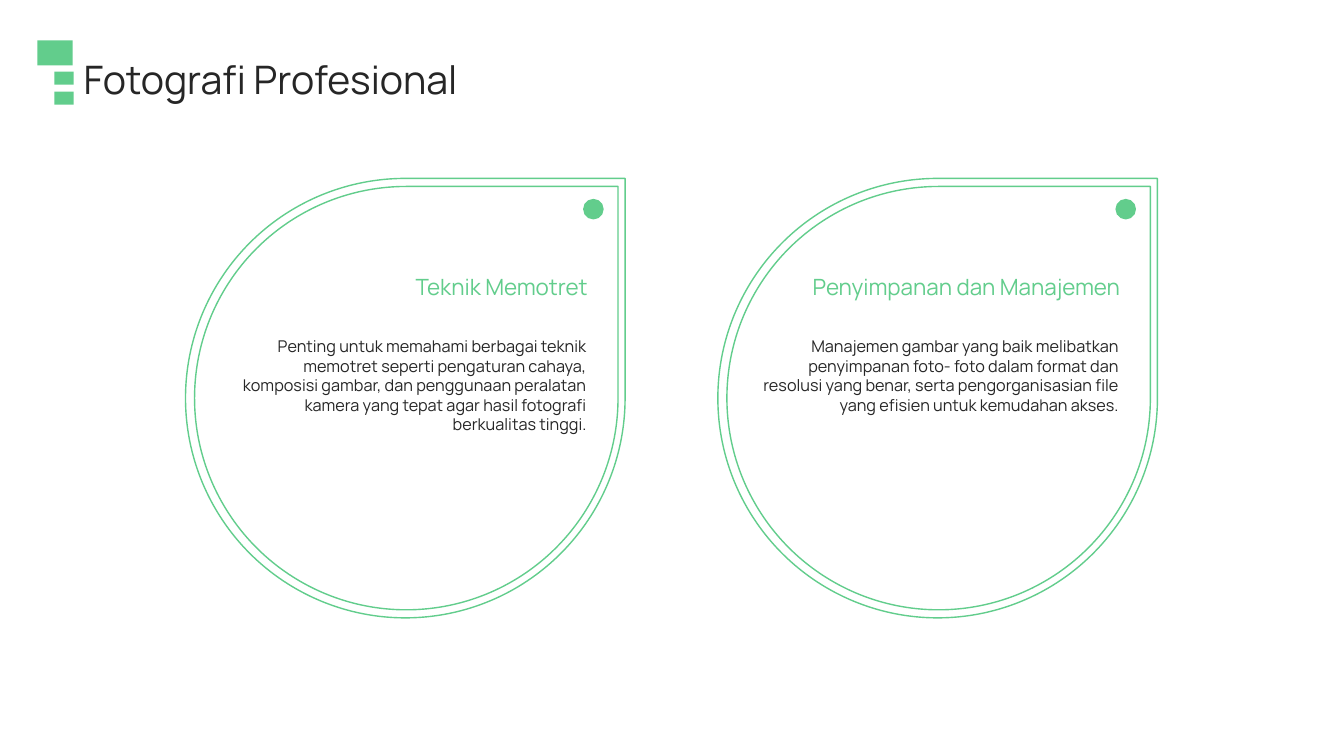
from pptx import Presentation
from pptx.dml.color import RGBColor
from pptx.enum.shapes import MSO_SHAPE
from pptx.enum.text import MSO_ANCHOR, PP_ALIGN
from pptx.util import Inches, Pt

GREEN = RGBColor(0x62, 0xCD, 0x8C)
DARK = RGBColor(0x26, 0x26, 0x26)
WHITE = RGBColor(0xFF, 0xFF, 0xFF)
FONT = "Manrope"

TOPICS = [
    ("Teknik Memotret",
     "Penting untuk memahami berbagai teknik memotret seperti pengaturan cahaya, "
     "komposisi gambar, dan penggunaan peralatan kamera yang tepat agar hasil "
     "fotografi berkualitas tinggi."),
    ("Penyimpanan dan Manajemen",
     "Manajemen gambar yang baik melibatkan penyimpanan foto- foto dalam format "
     "dan resolusi yang benar, serta pengorganisasian file yang efisien untuk "
     "kemudahan akses."),
]
FIRST_LEFT = 1.84
TOPIC_PITCH = 5.28


def write_text(holder, text, *, size, color=DARK, align=PP_ALIGN.LEFT,
               anchor=MSO_ANCHOR.TOP):
    frame = holder.text_frame
    frame.word_wrap = True
    frame.vertical_anchor = anchor
    frame.margin_left = frame.margin_right = 0
    frame.margin_top = frame.margin_bottom = 0
    paragraph = frame.paragraphs[0]
    paragraph.alignment = align
    paragraph.line_spacing = 1.0
    paragraph.space_before = Pt(0)
    run = paragraph.add_run()
    run.text = text
    run.font.name = FONT
    run.font.size = Pt(size)
    run.font.color.rgb = color


def add_figure(slide, kind, left, top, width, height, fill=GREEN, line=None):
    figure = slide.shapes.add_shape(
        kind, Inches(left), Inches(top), Inches(width), Inches(height))
    figure.shadow.inherit = False
    figure.fill.solid()
    figure.fill.fore_color.rgb = fill
    if line is None:
        figure.line.fill.background()
    else:
        figure.line.color.rgb = line
        figure.line.width = Pt(1)


def add_label(slide, text, left, top, width, height, **text_format):
    label = slide.shapes.add_textbox(
        Inches(left), Inches(top), Inches(width), Inches(height))
    write_text(label, text, **text_format)


def add_title(slide, text):
    title = slide.shapes.title
    title.left, title.top = Inches(0.83), Inches(0.53)
    title.width, title.height = Inches(11.88), Inches(0.51)
    write_text(title, text, size=28, anchor=MSO_ANCHOR.MIDDLE)


def add_title_marks(slide):
    add_figure(slide, MSO_SHAPE.RECTANGLE, 0.37, 0.4, 0.35, 0.25)
    for top in (0.71, 0.91):
        add_figure(slide, MSO_SHAPE.RECTANGLE, 0.54, top, 0.19, 0.13)


def add_topic(slide, left, heading, body):
    # Double teardrop outline with a dot in its corner
    for dx, top, side in ((0, 1.77, 4.36), (0.09, 1.85, 4.2)):
        add_figure(slide, MSO_SHAPE.TEAR, left + dx, top, side, side,
                   fill=WHITE, line=GREEN)
    add_figure(slide, MSO_SHAPE.OVAL, left + 3.95, 1.98, 0.19, 0.19, line=GREEN)

    # Heading and body, flush right
    add_label(slide, heading, left + 0.83, 2.43, 3.16, 0.83, size=16,
              color=GREEN, align=PP_ALIGN.RIGHT, anchor=MSO_ANCHOR.MIDDLE)
    add_label(slide, body, left + 0.45, 3.34, 3.53, 1.5, size=11.6,
              align=PP_ALIGN.RIGHT)


def main():
    presentation = Presentation()
    presentation.slide_width = Inches(13.33)
    presentation.slide_height = Inches(7.5)
    slide = presentation.slides.add_slide(presentation.slide_layouts[5])

    add_title(slide, "Fotografi Profesional")
    add_title_marks(slide)
    for index, (heading, body) in enumerate(TOPICS):
        add_topic(slide, FIRST_LEFT + index * TOPIC_PITCH, heading, body)

    presentation.save("out.pptx")


if __name__ == "__main__":
    main()
